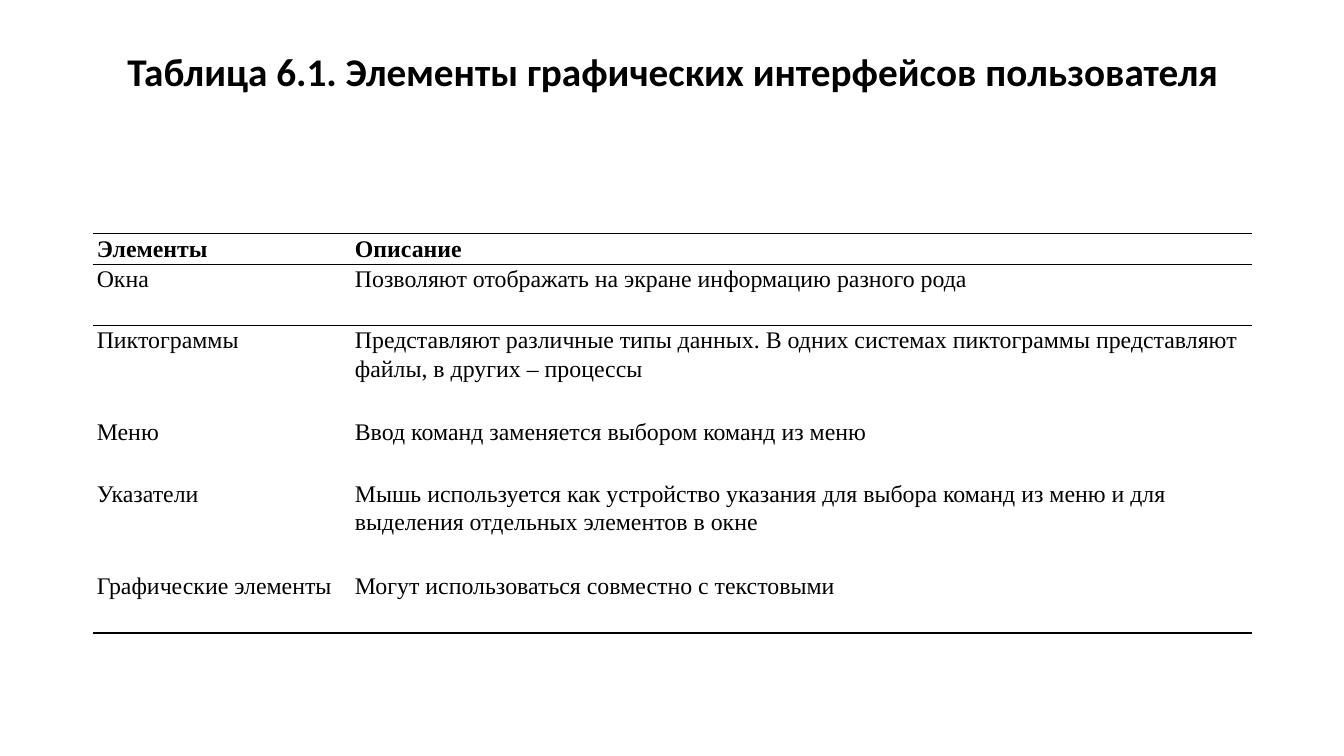
import dataclasses

import lxml.etree
import pptx
import pptx.dml.color
import pptx.enum.text
import pptx.oxml.ns
import pptx.util


@dataclasses.dataclass(frozen=True)
class Theme:
    ink: str = "000000"
    paper: str = "FFFFFF"
    heading_font: str = "Calibri"
    table_font: str = "Times New Roman"
    heading_size: int = 28
    table_size: int = 17
    rule_width: int = 1


THEME = Theme()
PAGE_WIDTH, PAGE_HEIGHT = 13.33, 7.5
MARGIN = 0.92
CONTENT_WIDTH = 11.5
TABLE_TOP = 2.32
COLUMN_WIDTHS = (2.56, CONTENT_WIDTH - 2.56)
HEADER_HEIGHT = 0.3
LINE_HEIGHT = 0.305
PLAIN_STYLE = "{2D5ABB26-0587-4C30-8999-92F81FD0307C}"

HEADING = "Таблица 6.1. Элементы графических интерфейсов пользователя"
HEADER = ("Элементы", "Описание")
ELEMENTS = (
    ("Окна", "Позволяют отображать на экране информацию разного рода", 2),
    ("Пиктограммы", "Представляют различные типы данных. В одних системах "
     "пиктограммы представляют файлы, в других – процессы", 3),
    ("Меню", "Ввод команд заменяется выбором команд из меню", 2),
    ("Указатели", "Мышь используется как устройство указания для выбора "
     "команд из меню и для выделения отдельных элементов в окне", 3),
    ("Графические элементы", "Могут использоваться совместно с текстовыми", 2),
)


def inches(value):
    return pptx.util.Inches(value)


def color(value):
    return pptx.dml.color.RGBColor.from_string(value)


def add_span(para, text, font, size, bold):
    span = para.add_run()
    span.text = text
    span.font.name = font
    span.font.size = pptx.util.Pt(size)
    span.font.bold = bold
    span.font.color.rgb = color(THEME.ink)


def set_heading(page):
    box = page.shapes.title
    box.left, box.top = inches(MARGIN), inches(0.47)
    box.width, box.height = inches(CONTENT_WIDTH), inches(0.66)
    frame = box.text_frame
    frame.word_wrap = True
    frame.auto_size = pptx.enum.text.MSO_AUTO_SIZE.NONE
    frame.vertical_anchor = pptx.enum.text.MSO_ANCHOR.TOP
    para = frame.paragraphs[0]
    para.alignment = pptx.enum.text.PP_ALIGN.CENTER
    para.line_spacing = 0.9
    para.space_before = pptx.util.Pt(10)
    add_span(para, HEADING, THEME.heading_font, THEME.heading_size, True)


def add_rule(cell, side):
    name = pptx.oxml.ns.qn
    properties = cell._tc.get_or_add_tcPr()
    rule = lxml.etree.SubElement(properties, name(f"a:{side}"))
    rule.set("w", str(pptx.util.Pt(THEME.rule_width)))
    fill = lxml.etree.SubElement(rule, name("a:solidFill"))
    lxml.etree.SubElement(fill, name("a:srgbClr")).set("val", THEME.ink)


def fill_cell(cell, text, bold, sides):
    for side in sides:
        add_rule(cell, side)
    cell.fill.solid()
    cell.fill.fore_color.rgb = color(THEME.paper)
    cell.margin_left = cell.margin_right = inches(0.04)
    cell.margin_top = cell.margin_bottom = 0
    para = cell.text_frame.paragraphs[0]
    para.line_spacing = 1.07
    add_span(para, text, THEME.table_font, THEME.table_size, bold)


def rule_sides(index, last):
    if index == 0:
        return ("lnT", "lnB")
    if index == 1:
        return ("lnT",)
    return ("lnB",) if index == last else ()


def add_element_table(page):
    rows = [HEADER] + [element[:2] for element in ELEMENTS]
    heights = [HEADER_HEIGHT] + [lines * LINE_HEIGHT for *_, lines in ELEMENTS]
    table = page.shapes.add_table(
        len(rows), len(HEADER), inches(MARGIN), inches(TABLE_TOP),
        inches(CONTENT_WIDTH), inches(sum(heights))).table
    table.first_row = True
    table.horz_banding = False
    table._tbl.tblPr.find(pptx.oxml.ns.qn("a:tableStyleId")).text = PLAIN_STYLE
    for column, width in zip(table.columns, COLUMN_WIDTHS):
        column.width = inches(width)
    for index, (texts, height) in enumerate(zip(rows, heights)):
        table.rows[index].height = inches(height)
        sides = rule_sides(index, len(rows) - 1)
        for cell, text in zip(table.rows[index].cells, texts):
            fill_cell(cell, text, index == 0, sides)


def main():
    deck = pptx.Presentation()
    deck.slide_width, deck.slide_height = inches(PAGE_WIDTH), inches(PAGE_HEIGHT)
    page = deck.slides.add_slide(deck.slide_layouts[5])
    set_heading(page)
    add_element_table(page)
    deck.save("out.pptx")


if __name__ == "__main__":
    main()
